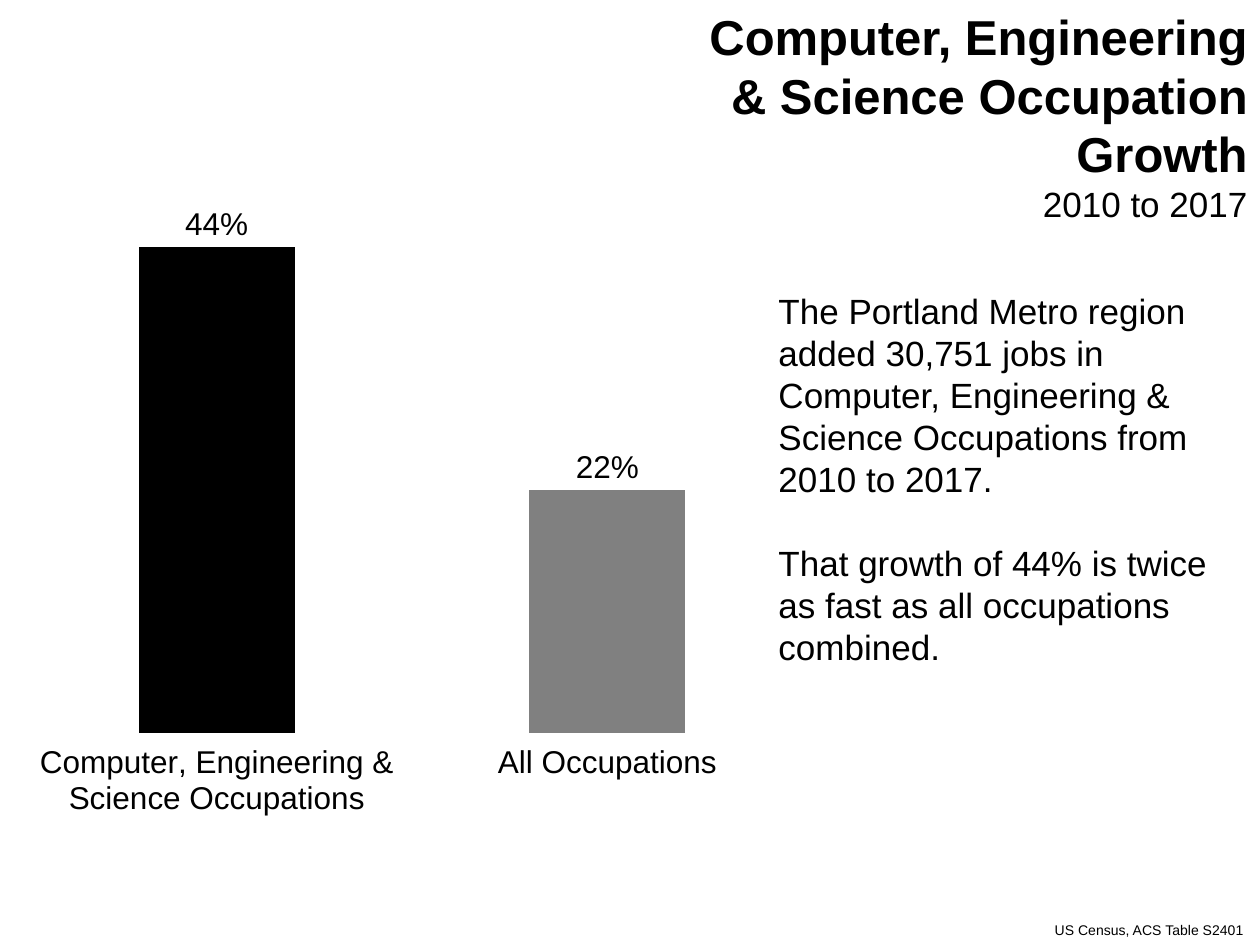
"""Build the occupation growth slide with a column chart and commentary."""
from pptx import Presentation
from pptx.chart.data import CategoryChartData
from pptx.dml.color import RGBColor
from pptx.enum.chart import XL_CHART_TYPE as Chart, XL_LABEL_POSITION as LabelPos
from pptx.enum.chart import XL_TICK_MARK as Tick
from pptx.enum.text import MSO_ANCHOR as Anchor, PP_ALIGN as Align
from pptx.util import Inches, Pt

FONT, BLACK = "Arial", "000000"
TITLE = [("Computer, Engineering & Science Occupation Growth", 28, True),
         ("2010 to 2017", 20, False)]
COMMENTARY = [
    ("The Portland Metro region added 30,751 jobs in Computer, Engineering & "
     "Science Occupations from 2010 to 2017.", 20, False),
    ("That growth of 44% is twice as fast as all occupations combined.", 20, False)]
SOURCE = [("US Census, ACS Table S2401 ", 8, False)]
TEXTS = [
    (TITLE, (5.42, 0, 4.58, 2.15), Align.RIGHT, Anchor.TOP, 0),
    (COMMENTARY, (6.08, 2.25, 3.92, 3.13), Align.LEFT, Anchor.TOP, 24),
    (SOURCE, (4.92, 6.96, 5.08, 0.54), Align.RIGHT, Anchor.BOTTOM, 0)]
GROWTH = [("Computer, Engineering & Science Occupations", 0.44, BLACK),
          ("All Occupations", 0.22, "808080")]
CHART_BOX = (0.04, 1.33, 6.46, 5.25)


def rgb(value):
    return RGBColor.from_string(value)


def style(font, size, bold=False):
    font.name, font.size, font.bold = FONT, Pt(size), bold
    font.color.rgb = rgb(BLACK)


def add_text(s, paragraphs, box, align, anchor, gap):
    tf = s.shapes.add_textbox(*map(Inches, box)).text_frame
    tf.word_wrap, tf.vertical_anchor = True, anchor
    for i, (text, size, bold) in enumerate(paragraphs):
        p = tf.add_paragraph() if i else tf.paragraphs[0]
        p.alignment = align
        p.space_before = Pt(gap if i else 0)
        r = p.add_run()
        r.text = text
        style(r.font, size, bold)


def add_growth_chart(s):
    data = CategoryChartData(number_format="0%")
    data.categories = [name for name, _, _ in GROWTH]
    data.add_series("Series 1", [value for _, value, _ in GROWTH])
    chart = s.shapes.add_chart(Chart.COLUMN_CLUSTERED, *map(Inches, CHART_BOX), data).chart
    chart.has_legend = chart.has_title = False
    style(chart.font, 18)

    cat, val = chart.category_axis, chart.value_axis
    cat.major_tick_mark = Tick.OUTSIDE
    cat.format.line.fill.background()
    val.visible = val.has_major_gridlines = False
    val.minimum_scale, val.maximum_scale = 0, 0.5

    plot = chart.plots[0]
    plot.gap_width, plot.vary_by_categories = 150, False
    plot.has_data_labels = True
    labels = plot.data_labels
    labels.show_value = True
    labels.number_format, labels.number_format_is_linked = "0%", False
    labels.position = LabelPos.OUTSIDE_END
    style(labels.font, 18)
    for i, (_, _, color) in enumerate(GROWTH):
        fill = plot.series[0].points[i].format.fill
        fill.solid()
        fill.fore_color.rgb = rgb(color)


def main():
    prs = Presentation()
    prs.slide_width, prs.slide_height = Inches(10), Inches(7.5)
    s = prs.slides.add_slide(prs.slide_layouts[6])
    for text in TEXTS:
        add_text(s, *text)
    add_growth_chart(s)
    prs.save("out.pptx")


if __name__ == "__main__":
    main()
